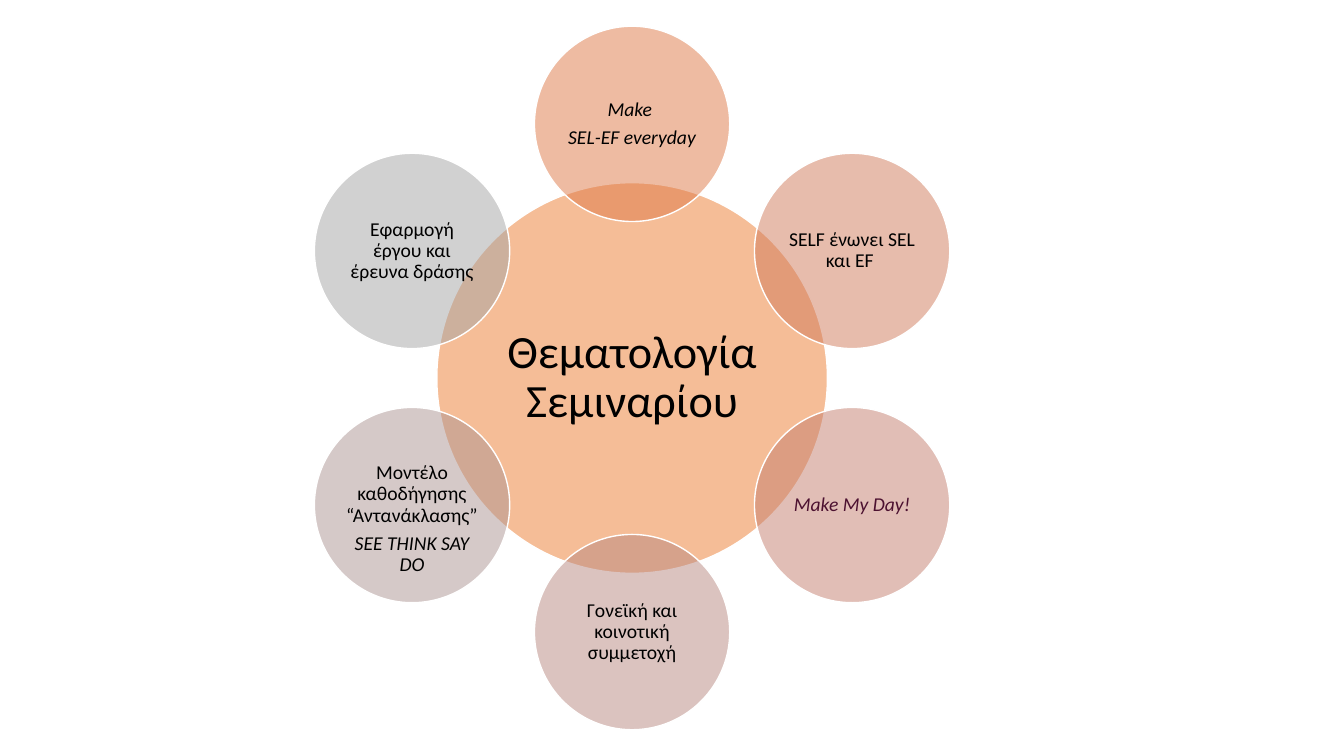
"""Build a radial diagram of seminar topics around a central theme."""
from math import cos, radians, sin

from lxml import etree
from pptx import Presentation
from pptx.dml.color import RGBColor
from pptx.enum.shapes import MSO_SHAPE
from pptx.enum.text import MSO_ANCHOR, PP_ALIGN
from pptx.oxml.ns import qn
from pptx.util import Pt

OVAL = MSO_SHAPE.OVAL
MIDDLE = MSO_ANCHOR.MIDDLE
CENTER = PP_ALIGN.CENTER
PX = 9525
FONT = "Calibri"
COLORS = {
    "hub": "ED7D31", "daily": "DE7946", "self": "D07A5B", "day": "C47F6E",
    "home": "B88881", "model": "AD9593", "study": "A4A4A4",
    "line": "FFFFFF", "text": "000000", "plum": "4C1130",
}
MID_X, MID_Y = 602, 360
HUB, DISC, ORBIT = 372, 186, 242


def rgb(name):
    return RGBColor.from_string(COLORS[name])


def add_disc(mid_x, mid_y, width, fill, lines, size, ink="text", inset=2, drop=0):
    box = [round(v * PX) for v in (mid_x - width / 2, mid_y - width / 2, width, width)]
    disc = slide.shapes.add_shape(OVAL, *box)
    disc.shadow.inherit = False
    disc.fill.solid()
    disc.fill.fore_color.rgb = rgb(fill)
    tint = disc.element.spPr.find(qn("a:solidFill")).find(qn("a:srgbClr"))
    etree.SubElement(tint, qn("a:alpha"), val="50000")
    disc.line.color.rgb = rgb("line")
    disc.line.width = Pt(1)
    frame = disc.text_frame
    frame.word_wrap = True
    frame.vertical_anchor = MIDDLE
    frame.margin_left = frame.margin_right = frame.margin_bottom = inset * PX
    frame.margin_top = (inset + drop) * PX
    for i, (words, slant) in enumerate(lines):
        para = frame.add_paragraph() if i else frame.paragraphs[0]
        para.alignment = CENTER
        para.line_spacing = 0.9
        para.space_before = Pt(4.9 if i else 0)
        run = para.add_run()
        run.text = words
        run.font.name = FONT
        run.font.size = Pt(size)
        run.font.italic = slant
        run.font.color.rgb = rgb(ink)


deck = Presentation()
deck.slide_width, deck.slide_height = 1280 * PX, 720 * PX
slide = deck.slides.add_slide(deck.slide_layouts[6])

add_disc(MID_X, MID_Y, HUB, "hub", [("Θεματολογία Σεμιναρίου", False)], 33, inset=8)

topics = [
    ("daily", "text", 0, [("Make ", True), ("SEL-EF everyday", True)]),
    ("self", "text", 0, [("SELF ένωνει SEL και EF ", False)]),
    ("day", "plum", 0, [("Make My Day!", True)]),
    ("home", "text", 0, [("Γονεϊκή και κοινοτική συμμετοχή", False)]),
    ("model", "text", 27, [("Μοντέλο καθοδήγησης “Αντανάκλασης” ", False),
                           ("SEE THINK SAY DO", True)]),
    ("study", "text", 0, [("Εφαρμογή έργου και έρευνα δράσης", False)]),
]
for i, (fill, ink, drop, lines) in enumerate(topics):
    turn = radians(360 / len(topics) * i - 90)
    add_disc(MID_X + ORBIT * cos(turn), MID_Y + ORBIT * sin(turn), DISC,
             fill, lines, 14, ink, drop=drop)

deck.save("out.pptx")
